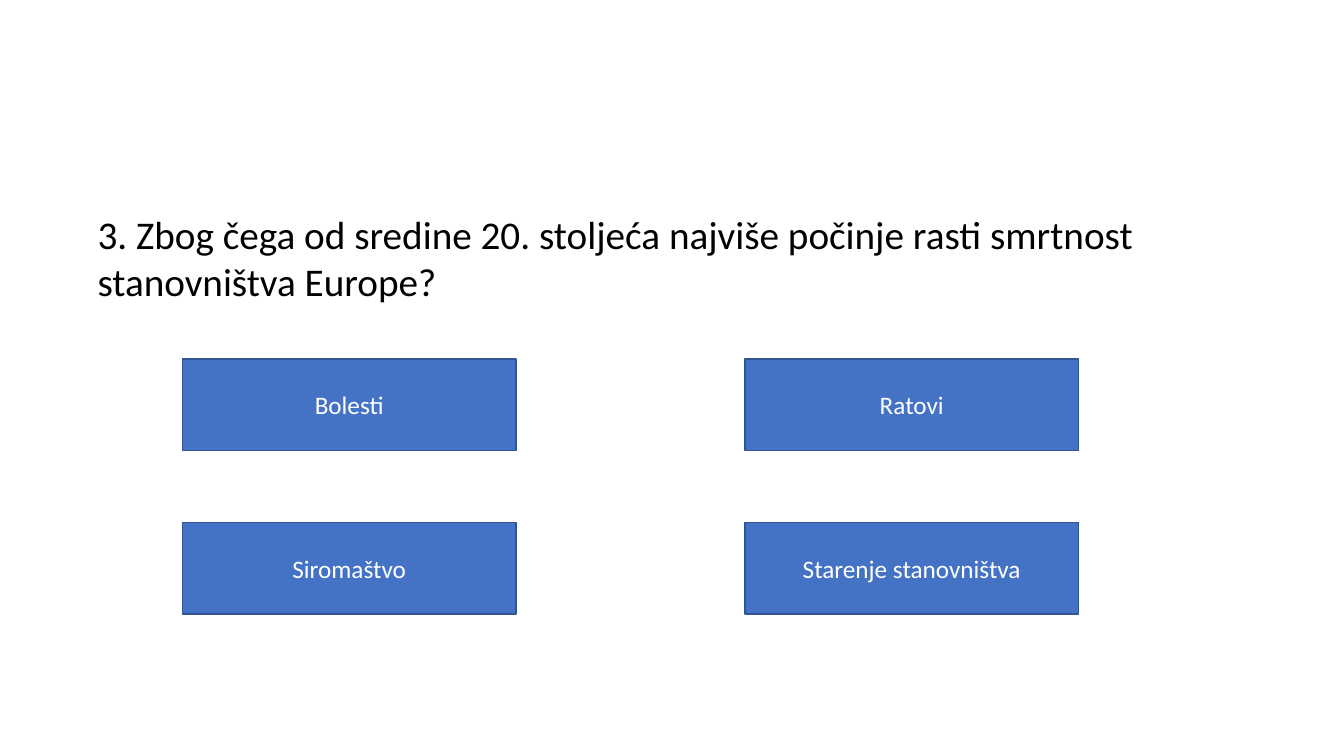
from dataclasses import dataclass

from pptx import Presentation
from pptx.dml.color import RGBColor
from pptx.enum.shapes import MSO_SHAPE
from pptx.enum.text import MSO_ANCHOR, MSO_AUTO_SIZE, PP_ALIGN
from pptx.util import Pt


@dataclass(frozen=True)
class Theme:
    """Colours, typeface and type sizes of the slide."""

    font: str = "Calibri"
    question_size: int = 28
    answer_size: int = 18
    question_color: RGBColor = RGBColor(0x00, 0x00, 0x00)
    answer_color: RGBColor = RGBColor(0xFF, 0xFF, 0xFF)
    button_fill: RGBColor = RGBColor(0x44, 0x72, 0xC4)
    button_line: RGBColor = RGBColor(0x32, 0x54, 0x91)


THEME = Theme()
QUESTION = (
    "3. Zbog čega od sredine 20. stoljeća najviše počinje rasti smrtnost "
    "stanovništva Europe?"
)
ANSWERS = [["Bolesti", "Ratovi"], ["Siromaštvo", "Starenje stanovništva"]]
GRID_LEFT, GRID_TOP = 130.3, 256.3
COLUMN_STEP, ROW_STEP = 401.8, 116.7
BUTTON_WIDTH, BUTTON_HEIGHT = 238.3, 65.5


def write_text(shape, text, size, color):
    """Put one styled paragraph into a shape and return it."""
    shape.text_frame.word_wrap = True
    paragraph = shape.text_frame.paragraphs[0]
    paragraph.text = text
    paragraph.font.name = THEME.font
    paragraph.font.size = Pt(size)
    paragraph.font.color.rgb = color
    return paragraph


def add_question(slide, text):
    """Add the question above the answers."""
    box = slide.shapes.add_textbox(Pt(62.6), Pt(146.9), Pt(897.1), Pt(75))
    write_text(box, text, THEME.question_size, THEME.question_color)
    box.text_frame.auto_size = MSO_AUTO_SIZE.SHAPE_TO_FIT_TEXT


def add_answer(slide, text, left, top):
    """Add one answer button with centred text."""
    button = slide.shapes.add_shape(
        MSO_SHAPE.RECTANGLE, Pt(left), Pt(top), Pt(BUTTON_WIDTH), Pt(BUTTON_HEIGHT)
    )
    button.shadow.inherit = False
    button.fill.solid()
    button.fill.fore_color.rgb = THEME.button_fill
    button.line.color.rgb = THEME.button_line
    button.line.width = Pt(1)
    button.text_frame.vertical_anchor = MSO_ANCHOR.MIDDLE
    paragraph = write_text(button, text, THEME.answer_size, THEME.answer_color)
    paragraph.alignment = PP_ALIGN.CENTER


def main():
    """Build the quiz slide and save it."""
    presentation = Presentation()
    presentation.slide_width, presentation.slide_height = Pt(960), Pt(540)
    slide = presentation.slides.add_slide(presentation.slide_layouts[6])
    add_question(slide, QUESTION)
    for row, answers in enumerate(ANSWERS):
        for column, answer in enumerate(answers):
            left = GRID_LEFT + column * COLUMN_STEP
            top = GRID_TOP + row * ROW_STEP
            add_answer(slide, answer, left, top)
    presentation.save("out.pptx")


if __name__ == "__main__":
    main()
